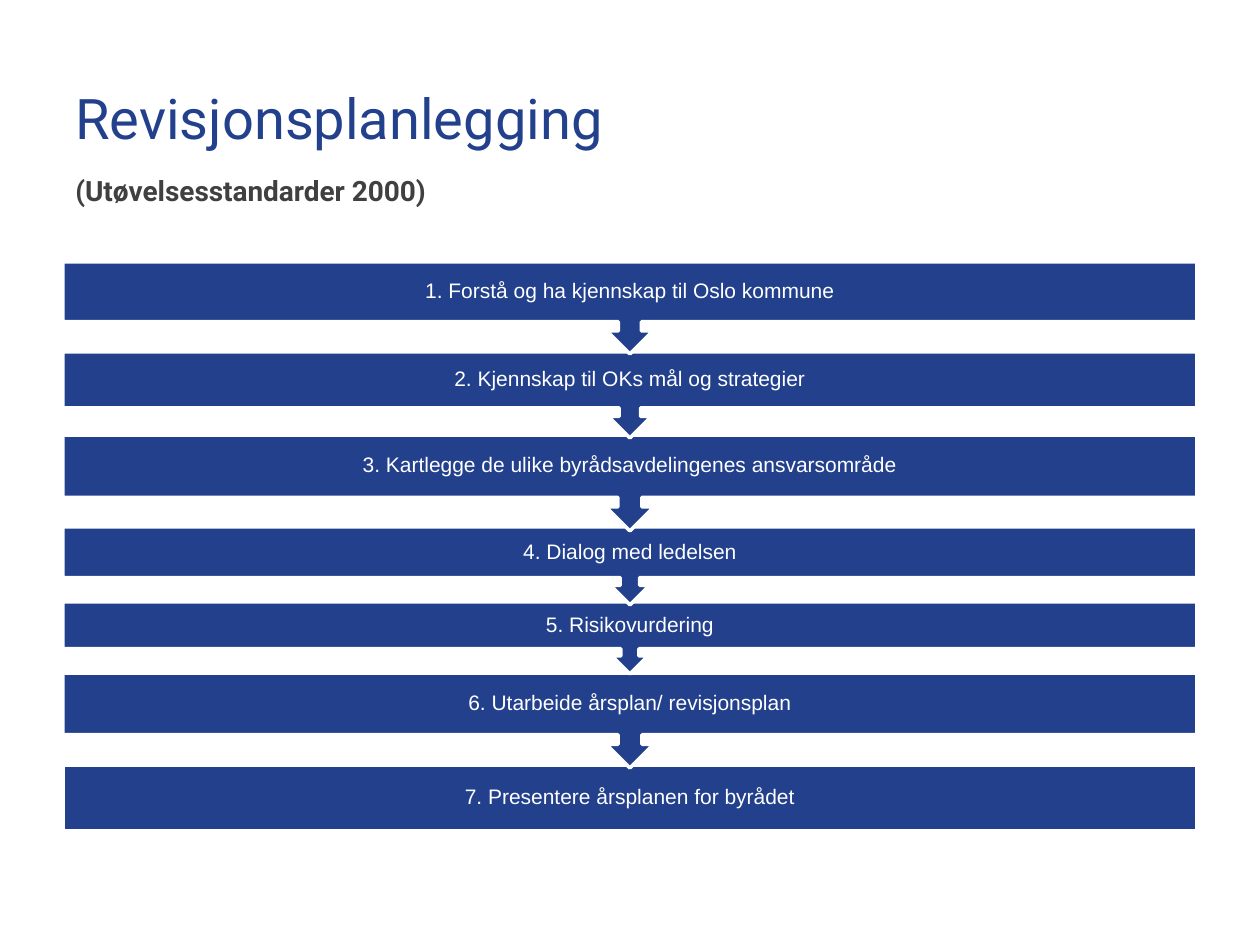
"""Build the Revisjonsplanlegging slide: a title and seven stacked planning steps."""
import pptx
import pptx.util
import pptx.dml.color
import pptx.enum.shapes
import pptx.enum.text

PX = 914400 // 126
COLORS = {"blue": "22408C", "gray": "404040", "white": "FFFFFF"}
SHAPE = pptx.enum.shapes.MSO_SHAPE
ALIGN = pptx.enum.text.PP_ALIGN
ANCHOR = pptx.enum.text.MSO_ANCHOR
Pt = pptx.util.Pt


def rgb(name):
    return pptx.dml.color.RGBColor.from_string(COLORS[name])


def write(sp, text, color, frame, para, font):
    tf = sp.text_frame
    p = tf.paragraphs[0]
    r = p.add_run()
    r.text = text
    r.font.color.rgb = rgb(color)
    for obj, values in ((tf, frame), (p, para), (r.font, font)):
        for key, value in values.items():
            setattr(obj, key, value)


prs = pptx.Presentation()
prs.slide_width, prs.slide_height = 1260 * PX, 945 * PX
s = prs.slides.add_slide(prs.slide_layouts[6])

headings = [
    ("Revisjonsplanlegging", "blue", 77, 120, {},
     {"name": "Roboto", "size": Pt(32)}),
    ("(Utøvelsesstandarder 2000)", "gray", 164, 50, {"line_spacing": Pt(21)},
     {"name": "Roboto", "size": Pt(16), "bold": True}),
]
for text, color, top, height, para, font in headings:
    sp = s.shapes.add_textbox(63 * PX, top * PX, 1134 * PX, height * PX)
    write(sp, text, color, {"word_wrap": True}, para, font)

steps = [
    ("1. Forstå og ha kjennskap til Oslo kommune", 262, 92),
    ("2. Kjennskap til OKs mål og strategier", 352, 86),
    ("3. Kartlegge de ulike byrådsavdelingenes ansvarsområde", 435, 96),
    ("4. Dialog med ledelsen", 527, 78),
    ("5. Risikovurdering", 602, 72),
    ("6. Utarbeide årsplan/ revisjonsplan", 673, 95),
    ("7. Presentere årsplanen for byrådet", 765, 66),
]
step_frame = {"word_wrap": True, "vertical_anchor": ANCHOR.MIDDLE}
step_frame |= {f"margin_{side}": 11 * PX for side in ("left", "top", "right", "bottom")}
step_para = {"alignment": ALIGN.CENTER, "line_spacing": 0.9}
step_font = {"name": "Arial", "size": Pt(12)}
for text, top, height in reversed(steps):
    kind = SHAPE.RECTANGLE if text == steps[-1][0] else SHAPE.DOWN_ARROW_CALLOUT
    sp = s.shapes.add_shape(kind, 63 * PX, top * PX, 1134 * PX, height * PX)
    sp.shadow.inherit = False
    sp.fill.solid()
    sp.fill.fore_color.rgb = rgb("blue")
    sp.line.color.rgb = rgb("white")
    sp.line.width = Pt(2)
    write(sp, text, "white", step_frame, step_para, step_font)

prs.save("out.pptx")
